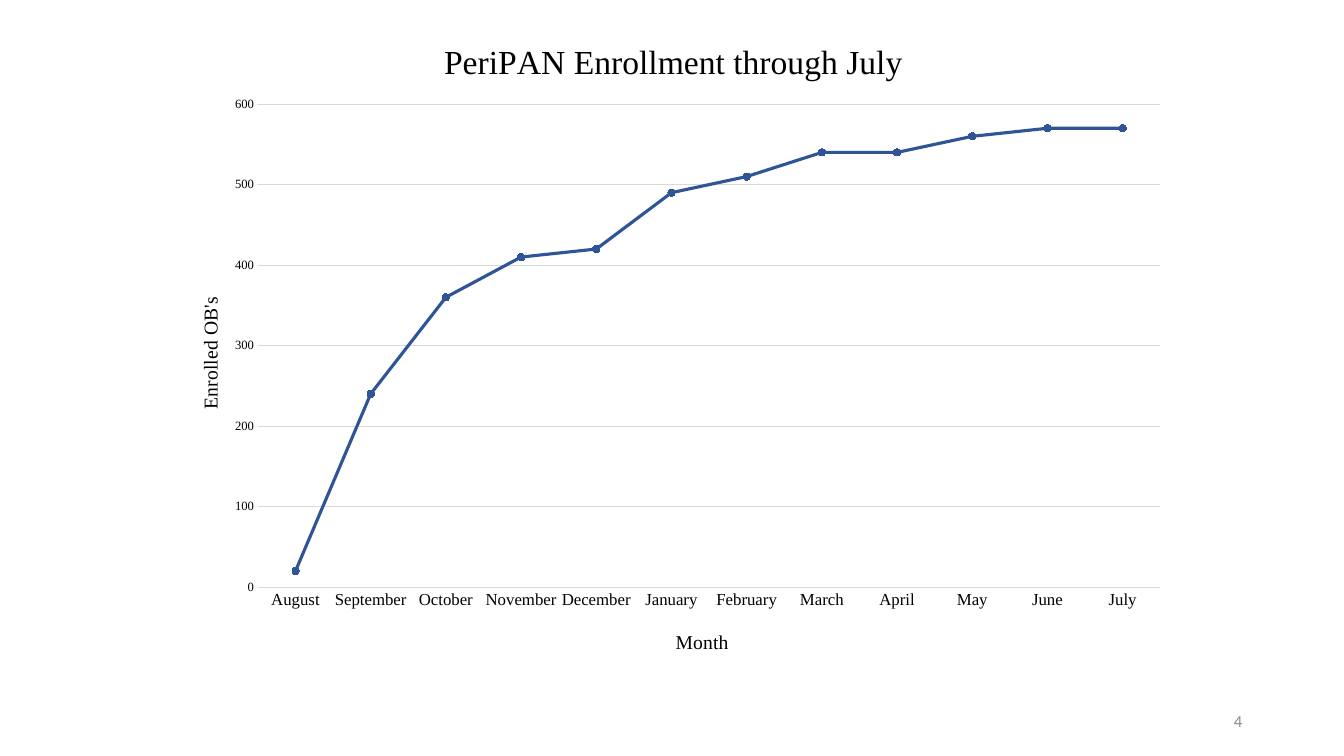
from dataclasses import dataclass
from typing import Any

from lxml.etree import SubElement
from pptx import Presentation
from pptx.chart.data import CategoryChartData
from pptx.dml.color import RGBColor as Color
from pptx.enum.chart import XL_CHART_TYPE as ChartType
from pptx.enum.chart import XL_MARKER_STYLE as Marker
from pptx.enum.chart import XL_TICK_MARK as Tick
from pptx.enum.text import MSO_ANCHOR as Anchor
from pptx.enum.text import PP_ALIGN as Align
from pptx.oxml.ns import qn
from pptx.util import Inches, Pt


@dataclass(frozen=True)
class Theme:
    serif: str = "Times New Roman"
    sans: str = "Calibri"
    ink: Color = Color(0x00, 0x00, 0x00)
    muted: Color = Color(0x8C, 0x8C, 0x8C)
    grid: Color = Color(0xD9, 0xD9, 0xD9)
    series: Color = Color(0x2F, 0x55, 0x97)
    title: int = 24
    axis_title: int = 14
    months: int = 12
    values: int = 9
    page_number: int = 12


@dataclass(frozen=True)
class Heading:
    owner: Any
    text: str
    size: int
    left: float
    top: float
    rotation: int = 0


THEME = Theme()
ENROLLMENT = {
    "August": 20, "September": 240, "October": 360, "November": 410,
    "December": 420, "January": 490, "February": 510, "March": 540,
    "April": 540, "May": 560, "June": 570, "July": 570,
}


def apply(target: Any, formats: dict[str, Any]) -> None:
    for name, value in formats.items():
        setattr(target, name, value)


def style_font(font: Any, size: int, name: str = THEME.serif, color: Color = THEME.ink) -> None:
    apply(font, {"size": Pt(size), "name": name, "bold": False})
    font.color.rgb = color


def style_line(line: Any, color: Color, width: float) -> None:
    line.color.rgb = color
    line.width = Pt(width)


def place(element: Any, index: int, position: dict[str, Any]) -> None:
    for old in element.findall(qn("c:layout")):
        element.remove(old)
    layout = SubElement(element, qn("c:layout"))
    element.insert(index, layout)
    manual = SubElement(layout, qn("c:manualLayout"))
    for name, value in position.items():
        SubElement(manual, qn(f"c:{name}")).set("val", str(value))


def add_heading(heading: Heading) -> None:
    is_axis = hasattr(heading.owner, "axis_title")
    title = heading.owner.axis_title if is_axis else heading.owner.chart_title
    frame = title.text_frame
    frame.text = heading.text
    style_font(frame.paragraphs[0].runs[0].font, heading.size)
    if heading.rotation:
        body = frame._txBody.find(qn("a:bodyPr"))
        body.set("rot", str(heading.rotation * 60000))
        body.set("vert", "horz")
    place(title._element, 1, {
        "xMode": "edge", "yMode": "edge", "x": heading.left, "y": heading.top,
    })


def add_enrollment_chart(page: Any) -> None:
    data = CategoryChartData()
    data.categories = list(ENROLLMENT)
    data.add_series("Series 1", list(ENROLLMENT.values()))
    chart = page.shapes.add_chart(
        ChartType.LINE_MARKERS, Inches(1.62), Inches(0.07), Inches(10.09), Inches(6.6), data
    ).chart
    style_font(chart.font, 10)
    apply(chart, {"has_legend": False, "has_title": True})

    plot = chart.plots[0]
    plot.vary_by_categories = False
    line = plot.series[0]
    line.smooth = False
    style_line(line.format.line, THEME.series, 2.25)
    apply(line.marker, {"style": Marker.CIRCLE, "size": 5})
    line.marker.format.fill.solid()
    line.marker.format.fill.fore_color.rgb = THEME.series
    style_line(line.marker.format.line, THEME.series, 0.75)

    months, values = chart.category_axis, chart.value_axis
    for axis, size in ((months, THEME.months), (values, THEME.values)):
        apply(axis, {"major_tick_mark": Tick.NONE, "minor_tick_mark": Tick.NONE})
        style_font(axis.tick_labels.font, size)
    style_line(months.format.line, THEME.grid, 0.75)
    values.format.line.fill.background()
    apply(values, {"minimum_scale": 0, "maximum_scale": 600, "major_unit": 100})
    style_line(values.major_gridlines.format.line, THEME.grid, 0.75)

    for heading in (
        Heading(chart, "PeriPAN Enrollment through July", THEME.title, 0.27, 0.04),
        Heading(months, "Month", THEME.axis_title, 0.5, 0.93),
        Heading(values, "Enrolled OB's", THEME.axis_title, 0.03, 0.43, -90),
    ):
        add_heading(heading)

    plot_area = chart._chartSpace.find(f".//{qn('c:plotArea')}")
    place(plot_area, 0, {
        "layoutTarget": "inner", "xMode": "edge", "yMode": "edge",
        "x": 0.093, "y": 0.146, "w": 0.887, "h": 0.726,
    })


def add_page_number(page: Any, number: str) -> None:
    box = page.shapes.add_textbox(Inches(9.42), Inches(6.95), Inches(3), Inches(0.4))
    apply(box.text_frame, {"word_wrap": True, "vertical_anchor": Anchor.MIDDLE})
    para = box.text_frame.paragraphs[0]
    para.alignment = Align.RIGHT
    span = para.add_run()
    span.text = number
    style_font(span.font, THEME.page_number, THEME.sans, THEME.muted)


def main() -> None:
    deck = Presentation()
    apply(deck, {"slide_width": Inches(13.33), "slide_height": Inches(7.5)})
    page = deck.slides.add_slide(deck.slide_layouts.get_by_name("Blank"))
    add_page_number(page, "4")
    add_enrollment_chart(page)
    deck.save("out.pptx")


if __name__ == "__main__":
    main()
